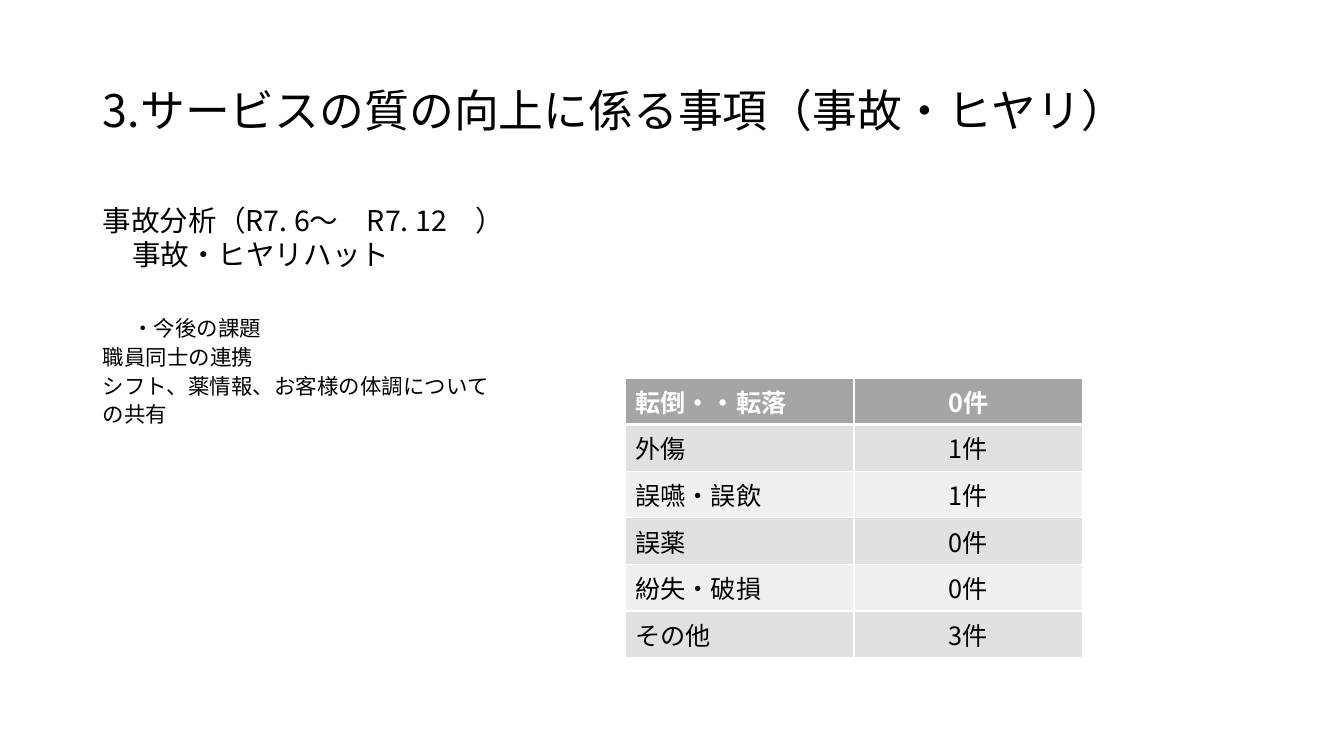
from pptx import Presentation, util as u
from pptx.dml.color import RGBColor
from pptx.enum import text
from pptx.oxml import ns
from lxml import etree

BLACK = RGBColor(0, 0, 0)
WHITE = RGBColor(255, 255, 255)
HEADER = RGBColor(0xA5, 0xA5, 0xA5)
BANDS = RGBColor(0xE1, 0xE1, 0xE1), RGBColor(0xF0, 0xF0, 0xF0)
FONT = "Noto Sans CJK JP"
LEFT, CENTER = text.PP_ALIGN.LEFT, text.PP_ALIGN.CENTER
INDENT = 0.29

ANALYSIS = [
    ("事故分析（R7. 6～　R7. 12　）", 20.4, 0, 7),
    ("事故・ヒヤリハット", 20.4, INDENT, 7),
    ("・今後の課題", 15.3, INDENT, 37),
    ("職員同士の連携", 15.3, 0, 8),
    ("シフト、薬情報、お客様の体調について", 15.3, 0, 7.4),
    ("の共有", 15.3, 0, 7.4),
]
INCIDENTS = [
    ("転倒・・転落", "0件"),
    ("外傷", "1件"),
    ("誤嚥・誤飲", "1件"),
    ("誤薬", "0件"),
    ("紛失・破損", "0件"),
    ("その他", "3件"),
]


def apply(target, formats):
    """Set each attribute of the target from a dict."""
    for name, value in formats.items():
        setattr(target, name, value)


def place(shape, box):
    """Move a shape to a box given in inches."""
    apply(shape, dict(zip(("left", "top", "width", "height"), map(u.Inches, box))))


def write(para, words, size, color=BLACK, bold=False, align=LEFT):
    """Write one formatted span into a paragraph."""
    para.alignment = align
    span = para.add_run()
    span.text = words
    apply(span.font, {"name": FONT, "size": u.Pt(size), "bold": bold})
    span.font.color.rgb = color
    etree.SubElement(span.font._element, ns.qn("a:ea"), typeface=FONT)


def add_title(page, box):
    """Fill the title placeholder."""
    title = page.shapes.title
    place(title, box)
    apply(title.text_frame, {"vertical_anchor": text.MSO_ANCHOR.MIDDLE,
                             "auto_size": text.MSO_AUTO_SIZE.NONE})
    para = title.text_frame.paragraphs[0]
    para.line_spacing = 0.9
    write(para, "3.サービスの質の向上に係る事項（事故・ヒヤリ）", 32)


def add_analysis(page, box):
    """Fill the body placeholder with the analysis lines."""
    body = page.placeholders[1]
    place(body, box)
    frame = body.text_frame
    frame.auto_size = text.MSO_AUTO_SIZE.NONE
    for number, (words, size, indent, gap) in enumerate(ANALYSIS):
        para = frame.add_paragraph() if number else frame.paragraphs[0]
        apply(para, {"line_spacing": 0.7, "space_before": u.Pt(gap)})
        write(para, words, size)
        props = para._p.get_or_add_pPr()
        props.set("marL", str(u.Inches(indent)))
        props.set("indent", "0")
        etree.SubElement(props, ns.qn("a:buNone"))


def border_cell(cell, bottom):
    """Draw white borders around a cell."""
    props = cell._tc.get_or_add_tcPr()
    for side, width in {"L": 1, "R": 1, "T": 1, "B": bottom}.items():
        line = etree.SubElement(props, ns.qn("a:ln" + side), w=str(u.Pt(width)))
        fill = etree.SubElement(line, ns.qn("a:solidFill"))
        etree.SubElement(fill, ns.qn("a:srgbClr"), val=str(WHITE))


def add_incidents(page, box):
    """Add the table of incident counts."""
    holder = page.shapes.add_table(len(INCIDENTS), 2, *map(u.Inches, box))
    for row, entry in enumerate(INCIDENTS):
        header = row == 0
        for column, words in enumerate(entry):
            cell = holder.table.cell(row, column)
            border_cell(cell, 3 if header else 1)
            cell.fill.solid()
            cell.fill.fore_color.rgb = HEADER if header else BANDS[(row - 1) % 2]
            write(cell.text_frame.paragraphs[0], words, 18,
                  WHITE if header else BLACK, header, CENTER if column else LEFT)


def main():
    """Build and save the deck."""
    deck = Presentation()
    apply(deck, {"slide_width": u.Inches(13.33), "slide_height": u.Inches(7.5)})
    page = deck.slides.add_slide(deck.slide_layouts[1])
    add_title(page, (0.92, 0.4, 11.5, 1.45))
    add_analysis(page, (0.92, 2.06, 11.5, 4.76))
    add_incidents(page, (6.2, 3.75, 4.54, 2.4))
    deck.save("out.pptx")


if __name__ == "__main__":
    main()
